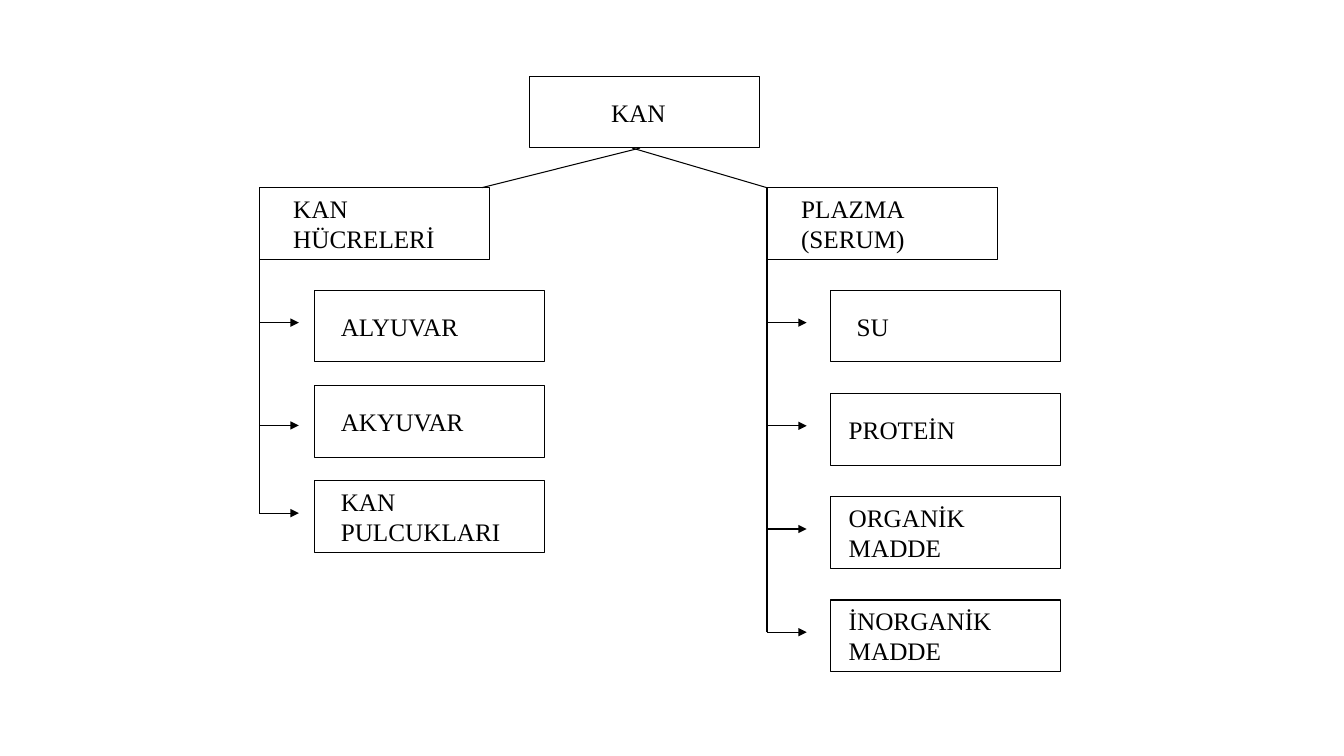
from lxml.etree import SubElement
from pptx import Presentation
from pptx.dml.color import RGBColor
from pptx.enum.shapes import MSO_CONNECTOR as Connector, MSO_SHAPE as Shape
from pptx.enum.text import MSO_ANCHOR as Anchor, PP_ALIGN as Align
from pptx.oxml.ns import qn
from pptx.util import Cm, Pt

BLACK = "000000"
FONT = "Times New Roman"
BOX_WIDTH, BOX_HEIGHT = 5.8, 1.8
BRANCH_TOP, FIRST_CHILD_TOP = 4.73, 7.32
ARROW_LENGTH = 1.0

BRANCHES = [
    {
        "label": "KAN HÜCRELERİ",
        "left": 6.53,
        "child_left": 7.93,
        "child_step": 2.4,
        "children": [("ALYUVAR", 0.66), ("AKYUVAR", 0.66), ("KAN PULCUKLARI", 0.66)],
        "arrow_tops": [8.13, 10.72, 12.93],
    },
    {
        "label": "PLAZMA (SERUM)",
        "left": 19.33,
        "child_left": 20.93,
        "child_step": 2.6,
        "children": [("SU", 0.66), ("PROTEİN", 0.46),
                     ("ORGANİK MADDE", 0.46), ("İNORGANİK MADDE", 0.46)],
        "arrow_tops": [8.13 + 2.6 * row for row in range(4)],
    },
]


def set_color(color_format, hex_color):
    color_format.rgb = RGBColor.from_string(hex_color)


def style_line(line):
    line.width = Pt(0.75)
    line.fill.solid()
    set_color(line.fill.fore_color, BLACK)


def add_box(slide, label, left, top, indent):
    box = slide.shapes.add_shape(
        Shape.RECTANGLE, Cm(left), Cm(top), Cm(BOX_WIDTH), Cm(BOX_HEIGHT))
    box.shadow.inherit = False
    box.fill.background()
    style_line(box.line)
    frame = box.text_frame
    frame.word_wrap = True
    frame.vertical_anchor = Anchor.MIDDLE
    frame.margin_left = Cm(indent)
    frame.margin_right = Cm(0.25)
    frame.margin_top = frame.margin_bottom = 0
    frame.text = label
    paragraph = frame.paragraphs[0]
    paragraph.alignment = Align.LEFT
    font = paragraph.runs[0].font
    font.name = FONT
    font.size = Pt(18)
    set_color(font.color, BLACK)


def add_line(slide, start, end, arrow=False):
    connector = slide.shapes.add_connector(
        Connector.STRAIGHT, *(Cm(value) for value in (*start, *end)))
    style_line(connector.line)
    properties = connector._element.spPr
    if arrow:
        SubElement(properties.find(qn("a:ln")), qn("a:tailEnd"), type="triangle")
    SubElement(properties, qn("a:effectLst"))


def add_branch(slide, branch):
    left = branch["left"]
    arrow_tops = branch["arrow_tops"]
    add_box(slide, branch["label"], left, BRANCH_TOP, 0.86)
    add_line(slide, (left, BRANCH_TOP + BOX_HEIGHT), (left, arrow_tops[-1]))
    for top in arrow_tops:
        add_line(slide, (left, top), (left + ARROW_LENGTH, top), arrow=True)
    for row, (label, indent) in enumerate(branch["children"]):
        top = FIRST_CHILD_TOP + row * branch["child_step"]
        add_box(slide, label, branch["child_left"], top, indent)


def main():
    presentation = Presentation()
    presentation.slide_width = Cm(33.87)
    presentation.slide_height = Cm(19.05)
    slide = presentation.slides.add_slide(presentation.slide_layouts[6])

    add_line(slide, (16.13, 3.73), (12.14, BRANCH_TOP))
    add_line(slide, (15.93, 3.73), (19.33, BRANCH_TOP))
    add_box(slide, "KAN", 13.34, 1.93, 2.06)
    for branch in BRANCHES:
        add_branch(slide, branch)

    presentation.save("out.pptx")


if __name__ == "__main__":
    main()
